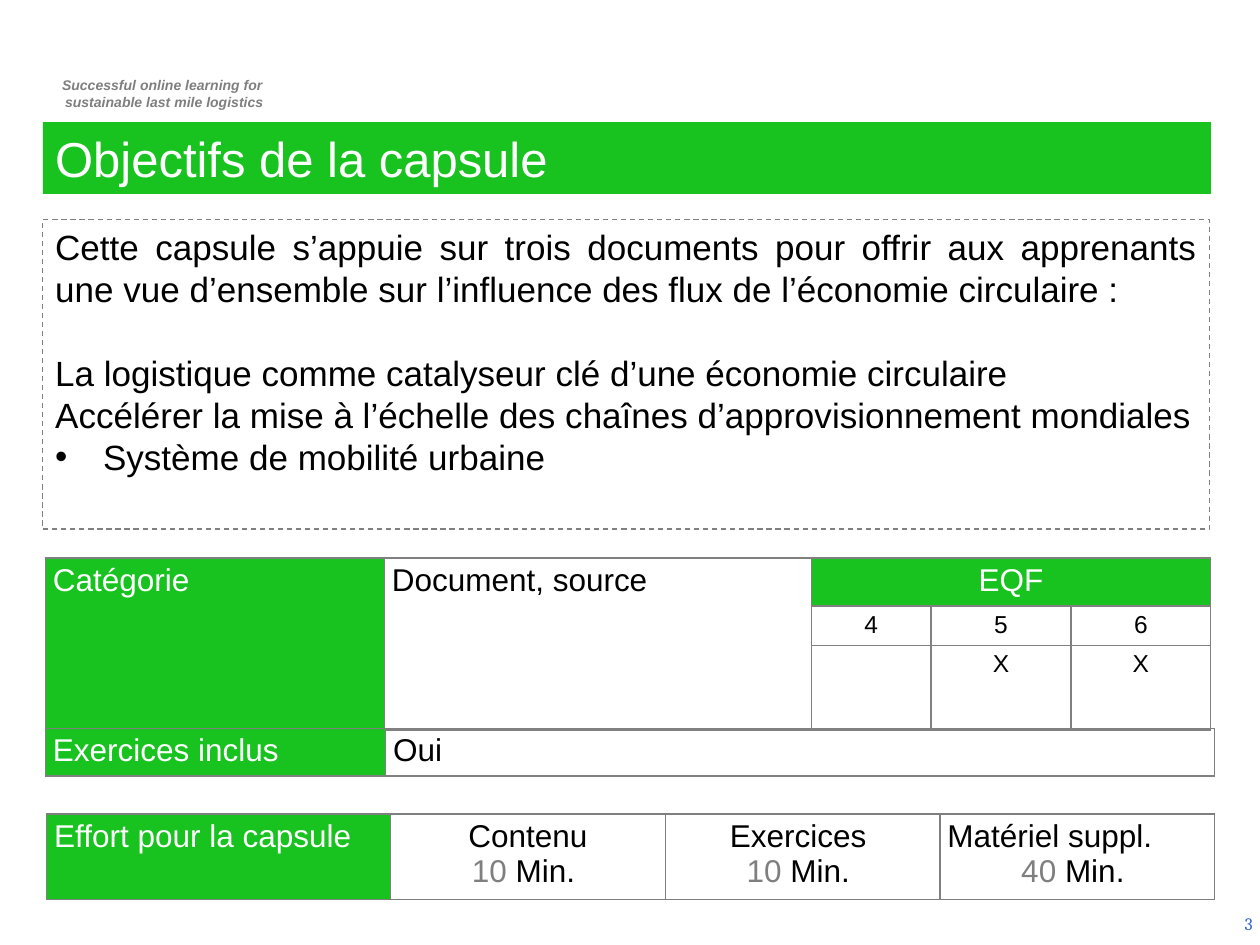
from lxml import etree
from pptx import Presentation
from pptx.dml.color import RGBColor
from pptx.enum.dml import MSO_LINE
from pptx.enum.shapes import MSO_SHAPE
from pptx.enum.text import MSO_ANCHOR, PP_ALIGN
from pptx.oxml.ns import qn
from pptx.util import Inches, Pt

LEFT, CENTER, RIGHT, JUSTIFY = PP_ALIGN.LEFT, PP_ALIGN.CENTER, PP_ALIGN.RIGHT, PP_ALIGN.JUSTIFY
TOP, MIDDLE = MSO_ANCHOR.TOP, MSO_ANCHOR.MIDDLE
RECT, DASH = MSO_SHAPE.RECTANGLE, MSO_LINE.DASH

THEME = {
    "green": "18C320", "white": "FFFFFF", "black": "000000", "blue": "3366CC",
    "border": "808080", "grey": "7F7F7F",
    "font": "Arial", "number_font": "Cambria",
    "tagline": 8, "number": 10, "title": 28, "body": 20, "body_line": 24,
    "cell": 18, "small_cell": 14,
}

TAGLINE = ["Successful online learning for ", "sustainable last mile logistics"]
TITLE = "Objectifs de la capsule"
INTRO = ("Cette capsule s’appuie sur trois documents pour offrir aux apprenants "
         "une vue d’ensemble sur l’influence des flux de l’économie circulaire :")
DOCUMENTS = ["La logistique comme catalyseur clé d’une économie circulaire",
             "Accélérer la mise à l’échelle des chaînes d’approvisionnement mondiales"]
BULLET = "Système de mobilité urbaine"
NUMBER = "3"
LEVELS = [("4", ""), ("5", "X"), ("6", "X")]
EXERCISES = ("Exercices inclus", "Oui")
EFFORT = "Effort pour la capsule"
EFFORTS = [("Contenu", "10 ", CENTER), ("Exercices ", "10 ", CENTER),
           ("Matériel suppl.", "40 ", LEFT)]


def rgb(name):
    return RGBColor.from_string(THEME[name])


def write(tf, text, *, size="cell", color="black", font="font", bold=False,
          italic=False, align=LEFT, before=0, line=None, bullet=False):
    """Add a paragraph; text is a string or a list of (text, color) runs."""
    p = tf.paragraphs[0]
    if p.runs:
        p = tf.add_paragraph()
    p.alignment = align
    if line:
        p.line_spacing = Pt(line)
    if before:
        p.space_before = Pt(before)
    if bullet:
        pPr = p._p.get_or_add_pPr()
        pPr.set("marL", str(Inches(0.38)))
        pPr.set("indent", str(-Inches(0.38)))
        etree.SubElement(pPr, qn("a:buFont"), typeface=THEME["font"])
        etree.SubElement(pPr, qn("a:buChar"), char="•")
    for part, part_color in [(text, color)] if isinstance(text, str) else text:
        r = p.add_run()
        r.text = part
        r.font.name, r.font.size = THEME[font], Pt(THEME[size])
        r.font.bold, r.font.italic = bold, italic
        r.font.color.rgb = rgb(part_color)
    return p


def prepare(sp, anchor=TOP):
    tf = sp.text_frame
    tf.word_wrap = True
    tf.vertical_anchor = anchor
    return tf


def add_text_box(s, box, anchor=TOP):
    return prepare(s.shapes.add_textbox(*map(Inches, box)), anchor)


def add_rect(s, box, fill=None, line=None):
    sp = s.shapes.add_shape(RECT, *map(Inches, box))
    sp.shadow.inherit = False
    if fill:
        sp.fill.solid()
        sp.fill.fore_color.rgb = rgb(fill)
    else:
        sp.fill.background()
    if line:
        sp.line.color.rgb = rgb(line)
        sp.line.width = Pt(0.75)
        sp.line.dash_style = DASH
    else:
        sp.line.fill.background()
    return prepare(sp)


def add_grid(s, left, top, cols, rows, border="border"):
    frame = s.shapes.add_table(len(rows), len(cols), Inches(left), Inches(top),
                               Inches(sum(cols)), Inches(sum(rows)))
    table = frame.table
    table.first_row = table.horz_banding = False
    for col, width in zip(table.columns, cols):
        col.width = Inches(width)
    for row, height in zip(table.rows, rows):
        row.height = Inches(height)
    for cell in table.iter_cells():
        cell.margin_left = cell.margin_right = Inches(0.06)
        cell.margin_top = cell.margin_bottom = Inches(0.04)
        tcPr = cell._tc.get_or_add_tcPr()
        for side in ("lnL", "lnR", "lnT", "lnB"):
            ln = etree.SubElement(tcPr, qn(f"a:{side}"), w=str(Pt(1)))
            fill = etree.SubElement(ln, qn("a:solidFill"))
            etree.SubElement(fill, qn("a:srgbClr"), val=THEME[border])
        cell.fill.background()
    return table


def write_header(cell, text, align=JUSTIFY):
    cell.fill.solid()
    cell.fill.fore_color.rgb = rgb("green")
    write(cell.text_frame, text, color="white", align=align)


def add_category_table(s):
    table = add_grid(s, 0.36, 4.43, [2.69, 3.39, 0.95, 1.11, 1.11], [0.37, 0.31, 0.67])
    for col in (0, 1):
        table.cell(0, col).merge(table.cell(2, col))
    table.cell(0, 2).merge(table.cell(0, 4))
    write_header(table.cell(0, 0), "Catégorie")
    write(table.cell(0, 1).text_frame, "Document, source", align=JUSTIFY)
    write_header(table.cell(0, 2), "EQF", CENTER)
    for col, level in enumerate(LEVELS, 2):
        for row, text in enumerate(level, 1):
            write(table.cell(row, col).text_frame, text, size="small_cell", align=CENTER)


def add_exercise_table(s):
    table = add_grid(s, 0.36, 5.78, [2.7, 6.58], [0.37])
    write_header(table.cell(0, 0), EXERCISES[0])
    write(table.cell(0, 1).text_frame, EXERCISES[1], align=JUSTIFY)


def add_effort_table(s):
    table = add_grid(s, 0.37, 6.46, [2.73] + [2.18] * 3, [0.68], "grey")
    write_header(table.cell(0, 0), EFFORT)
    for col, (label, minutes, align) in enumerate(EFFORTS, 1):
        tf = table.cell(0, col).text_frame
        write(tf, label, align=align)
        write(tf, [(minutes, "grey"), ("Min. ", "black")], align=CENTER)


def main():
    prs = Presentation()
    prs.slide_width, prs.slide_height = Inches(10), Inches(7.5)
    s = prs.slides.add_slide(prs.slide_layouts[6])

    tf = add_text_box(s, (0.29, 0.56, 2.03, 0.37))
    for text in TAGLINE:
        write(tf, text, size="tagline", color="grey", bold=True, italic=True, align=CENTER)

    tf = add_text_box(s, (7.71, 7.13, 2.33, 0.4), MIDDLE)
    write(tf, NUMBER, size="number", color="blue", font="number_font", align=RIGHT)

    tf = add_rect(s, (0.34, 0.97, 9.27, 0.57), fill="green")
    write(tf, TITLE, size="title", color="white")

    tf = add_rect(s, (0.34, 1.74, 9.26, 2.46), line="border")
    body = {"size": "body", "line": THEME["body_line"], "align": JUSTIFY}
    write(tf, INTRO, **body)
    for i, text in enumerate(DOCUMENTS):
        write(tf, text, before=0 if i else THEME["body_line"], **body)
    write(tf, BULLET, bullet=True, **body)

    add_category_table(s)
    add_exercise_table(s)
    add_effort_table(s)
    prs.save("out.pptx")


if __name__ == "__main__":
    main()
